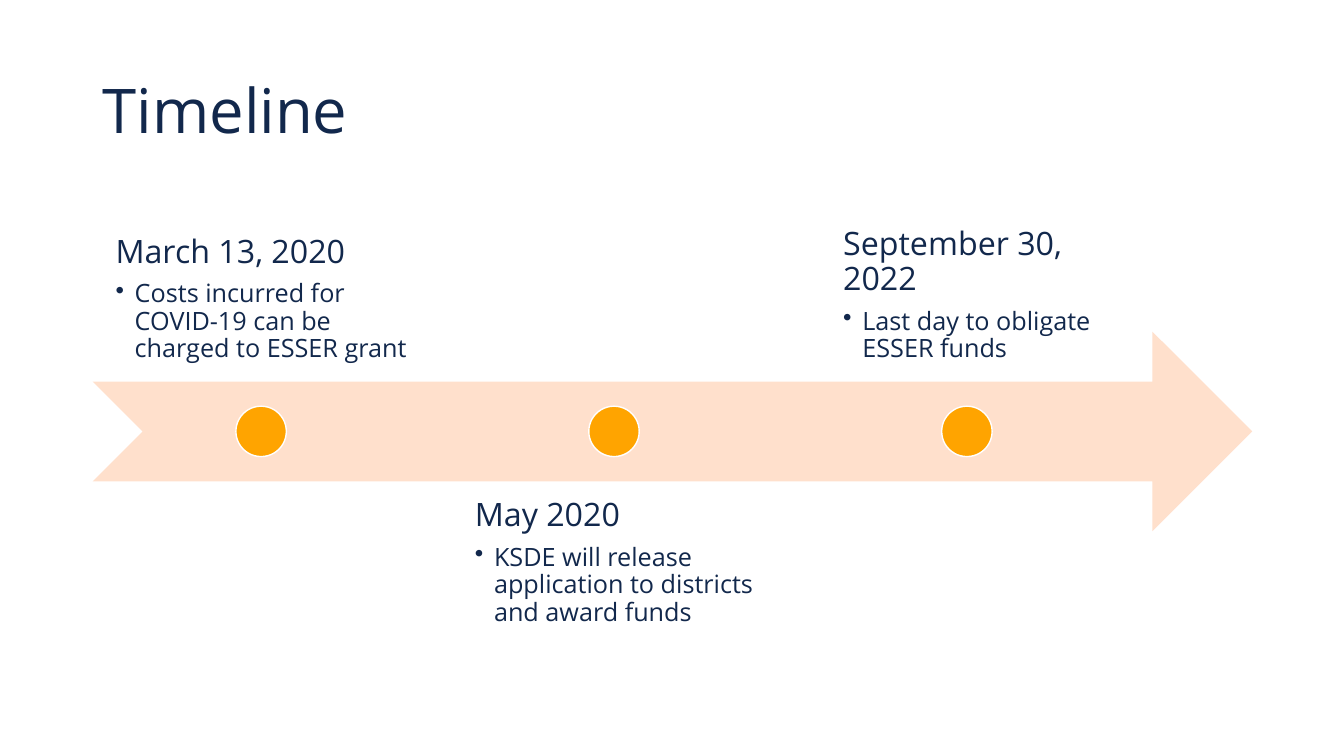
from lxml.etree import SubElement
from pptx import Presentation
from pptx.dml.color import RGBColor
from pptx.enum.shapes import MSO_SHAPE as Preset
from pptx.enum.text import MSO_ANCHOR as Anchor
from pptx.oxml.ns import qn
from pptx.util import Inches, Pt

NAVY = RGBColor(0x12, 0x28, 0x4C)
PEACH = RGBColor(0xFF, 0xE0, 0xCC)
ORANGE = RGBColor(0xFF, 0xA4, 0x00)
WHITE = RGBColor(0xFF, 0xFF, 0xFF)
FONT = "Open Sans"

LEFT, WIDTH = 0.92, 11.5
STEP = 3.5
LABEL_WIDTH, LABEL_HEIGHT = 3.34, 1.98
LABEL_INSET = 0.18
ABOVE, BELOW = 1.8, 4.77
DOT_LEFT, DOT_TOP, DOT_SIZE = 2.34, 4.03, 0.5

MILESTONES = [
    ("March 13, 2020", "Costs incurred for COVID-19 can be charged to ESSER grant"),
    ("May 2020", "KSDE will release application to districts and award funds"),
    ("September 30, 2022", "Last day to obligate ESSER funds"),
]


def add_filled(page, preset, left, top, width, height, color):
    """Add a flat preset shape without an outline."""
    shape = page.shapes.add_shape(
        preset, Inches(left), Inches(top), Inches(width), Inches(height))
    shape.shadow.inherit = False
    shape.fill.solid()
    shape.fill.fore_color.rgb = color
    shape.line.fill.background()
    return shape


def add_box(page, left, top, width, height, anchor):
    """Add a wrapping text box and return its text frame."""
    frame = page.shapes.add_textbox(
        Inches(left), Inches(top), Inches(width), Inches(height)).text_frame
    frame.word_wrap = True
    frame.vertical_anchor = anchor
    return frame


def style_para(para, text, size):
    """Write text into a paragraph in the slide's font and colour."""
    para.text = text
    para.line_spacing = 0.9
    para.font.name = FONT
    para.font.size = Pt(size)
    para.font.color.rgb = NAVY


def add_bullet(para):
    """Give a paragraph a hanging bullet."""
    properties = para._p.get_or_add_pPr()
    properties.set("marL", str(Inches(0.19)))
    properties.set("indent", str(Inches(-0.19)))
    SubElement(properties, qn("a:buChar")).set("char", "•")


def add_label(page, left, top, anchor, date, detail):
    """Add a date with a bulleted detail, centred as a block in its box."""
    frame = add_box(page, left, top, LABEL_WIDTH, LABEL_HEIGHT, anchor)
    frame.margin_left = frame.margin_right = Inches(LABEL_INSET)
    frame.margin_top = frame.margin_bottom = Inches(LABEL_INSET)
    frame._txBody.bodyPr.set("anchorCtr", "1")
    heading = frame.paragraphs[0]
    style_para(heading, date, 23)
    heading.space_after = Pt(8)
    bullet = frame.add_paragraph()
    add_bullet(bullet)
    style_para(bullet, detail, 18)


def add_milestone(page, index, date, detail):
    """Add one dot on the arrow and its label, alternating sides."""
    shift = index * STEP
    top, anchor = (BELOW, Anchor.TOP) if index % 2 else (ABOVE, Anchor.BOTTOM)
    add_label(page, LEFT + shift, top, anchor, date, detail)
    dot = add_filled(page, Preset.OVAL, DOT_LEFT + shift, DOT_TOP,
                     DOT_SIZE, DOT_SIZE, ORANGE)
    dot.line.color.rgb = WHITE
    dot.line.width = Pt(1)


def main():
    """Build the timeline slide."""
    deck = Presentation()
    deck.slide_width, deck.slide_height = Inches(13.33), Inches(7.5)
    page = deck.slides.add_slide(deck.slide_layouts[6])
    add_filled(page, Preset.NOTCHED_RIGHT_ARROW, LEFT, 3.29, WIDTH, 1.98, PEACH)
    for index, (date, detail) in enumerate(MILESTONES):
        add_milestone(page, index, date, detail)
    title = add_box(page, LEFT, 0.4, WIDTH, 1.45, Anchor.MIDDLE)
    style_para(title.paragraphs[0], "Timeline", 44)
    deck.save("out.pptx")


if __name__ == "__main__":
    main()
